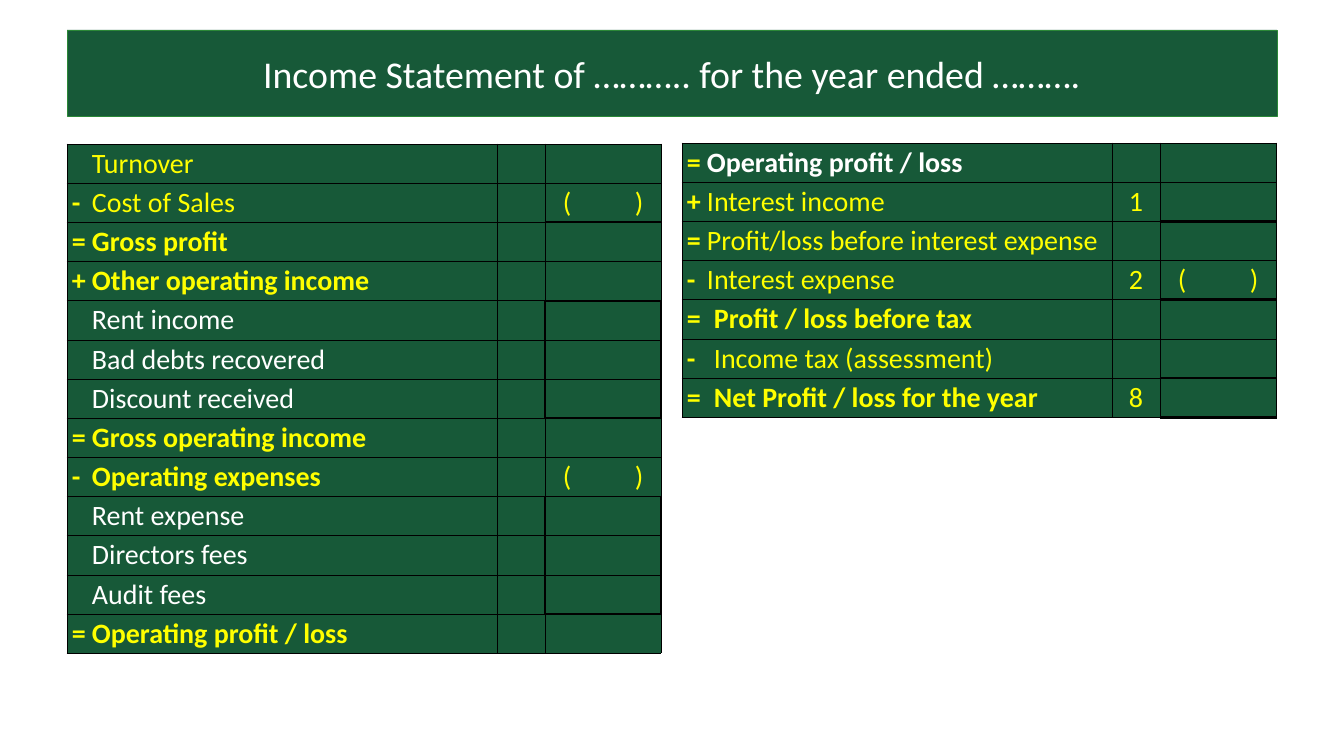
from dataclasses import dataclass

from lxml.etree import SubElement
from pptx import Presentation
from pptx.dml.color import RGBColor
from pptx.enum.shapes import MSO_SHAPE
from pptx.enum.text import MSO_ANCHOR, PP_ALIGN
from pptx.oxml.ns import qn
from pptx.util import Emu, Pt

GREEN = RGBColor(0x17, 0x59, 0x38)
EDGE_GREEN = RGBColor(0x2B, 0x88, 0x37)
YELLOW = RGBColor(0xFF, 0xFF, 0x00)
WHITE = RGBColor(0xFF, 0xFF, 0xFF)
BLACK = RGBColor(0x00, 0x00, 0x00)

SCALE = 18143
COLUMN_WIDTHS = (430, 48, 116)
ROW_HEIGHT = 39
PADDING = 5
SIGN_WIDTH = 20
WIDE_SIGN_WIDTH = 27
BRACKET_INSET = 18
BRACKET_GAP = 72


@dataclass
class Entry:
    """One line of the income statement."""
    label: str
    sign: str = ""
    color: RGBColor = YELLOW
    bold: bool = False
    note: str = ""
    bracketed: bool = False
    sign_width: int = SIGN_WIDTH


TRADING_ENTRIES = (
    Entry("Turnover"),
    Entry("Cost of Sales", "-", bracketed=True),
    Entry("Gross profit", "=", bold=True),
    Entry("Other operating income", "+", bold=True),
    Entry("Rent income", color=WHITE),
    Entry("Bad debts recovered", color=WHITE),
    Entry("Discount received", color=WHITE),
    Entry("Gross operating income", "=", bold=True),
    Entry("Operating expenses", "-", bold=True, bracketed=True),
    Entry("Rent expense", color=WHITE),
    Entry("Directors fees", color=WHITE),
    Entry("Audit fees", color=WHITE),
    Entry("Operating profit / loss", "=", bold=True),
)
PROFIT_ENTRIES = (
    Entry("Operating profit / loss", "=", color=WHITE, bold=True),
    Entry("Interest income", "+", note="1"),
    Entry("Profit/loss before interest expense", "="),
    Entry("Interest expense", "-", note="2", bracketed=True),
    Entry("Profit / loss before tax", "=", bold=True, sign_width=WIDE_SIGN_WIDTH),
    Entry("Income tax (assessment)", "-", sign_width=WIDE_SIGN_WIDTH),
    Entry("Net Profit / loss for the year", "=", bold=True, note="8",
          sign_width=WIDE_SIGN_WIDTH),
)


def px(length):
    """Turn whole pixels into EMU."""
    return Emu(length * SCALE)


def add_text(para, text, size=40, color=YELLOW, bold=False):
    """Append a formatted run to a paragraph."""
    span = para.add_run()
    span.text = text
    span.font.name = "Calibri"
    span.font.size = Pt(size)
    span.font.bold = bold
    span.font.color.rgb = color


def add_tab_stop(para, position):
    """Give a paragraph one left tab stop."""
    tab_list = SubElement(para._p.get_or_add_pPr(), qn("a:tabLst"))
    SubElement(tab_list, qn("a:tab"), pos=str(px(position)), algn="l")


def style_cell(cell, edges):
    """Draw the four cell edges, given widths in points, and fill the cell."""
    properties = cell._tc.get_or_add_tcPr()
    for side in "LRTB":
        line = SubElement(properties, qn(f"a:ln{side}"), w=str(Pt(edges.get(side, 1))))
        fill = SubElement(line, qn("a:solidFill"))
        SubElement(fill, qn("a:srgbClr"), val=str(BLACK))
    cell.fill.solid()
    cell.fill.fore_color.rgb = GREEN
    cell.vertical_anchor = MSO_ANCHOR.MIDDLE
    cell.margin_left = px(PADDING)


def write_entry(cells, entry):
    """Write the label, note and amount of one entry."""
    label_cell, note_cell, amount_cell = cells
    para = label_cell.text_frame.paragraphs[0]
    if entry.sign:
        add_tab_stop(para, entry.sign_width)
        add_text(para, entry.sign + "\t", bold=True)
    else:
        label_cell.margin_left = px(PADDING + entry.sign_width)
    add_text(para, entry.label, color=entry.color, bold=entry.bold)
    if entry.note:
        para = note_cell.text_frame.paragraphs[0]
        para.alignment = PP_ALIGN.CENTER
        add_text(para, entry.note)
    if entry.bracketed:
        amount_cell.margin_left = px(BRACKET_INSET)
        para = amount_cell.text_frame.paragraphs[0]
        add_tab_stop(para, BRACKET_GAP)
        add_text(para, "(\t)")


def add_statement(slide, left, top, entries, ruled, boxed, weight):
    """Add a statement table with heavy rules under and boxes round amounts."""
    frame = slide.shapes.add_table(
        len(entries), len(COLUMN_WIDTHS), px(left), px(top),
        px(sum(COLUMN_WIDTHS)), px(ROW_HEIGHT * len(entries)))
    table = frame.table
    table.first_row = table.horz_banding = False
    for column, width in zip(table.columns, COLUMN_WIDTHS):
        column.width = px(width)
    for index, entry in enumerate(entries):
        row = table.rows[index]
        row.height = px(ROW_HEIGHT)
        side = weight if index in boxed else 1
        amount_edges = {
            "L": side,
            "R": side,
            "T": weight if index - 1 in ruled else 1,
            "B": weight if index in ruled else 1,
        }
        cells = tuple(row.cells)
        for cell, edges in zip(cells, ({}, {"R": side}, amount_edges)):
            style_cell(cell, edges)
        write_entry(cells, entry)


def add_title(slide, text):
    """Add the title banner."""
    box = slide.shapes.add_shape(MSO_SHAPE.RECTANGLE, px(67), px(30), px(1210), px(86))
    box.shadow.inherit = False
    box.fill.solid()
    box.fill.fore_color.rgb = GREEN
    box.line.color.rgb = EDGE_GREEN
    box.line.width = Pt(0.75)
    box.text_frame.word_wrap = True
    box.text_frame.vertical_anchor = MSO_ANCHOR.MIDDLE
    para = box.text_frame.paragraphs[0]
    para.alignment = PP_ALIGN.CENTER
    add_text(para, text, size=54, color=WHITE)


def main():
    """Build the income statement slide."""
    deck = Presentation()
    deck.slide_width, deck.slide_height = px(1344), px(756)
    page = deck.slides.add_slide(deck.slide_layouts[6])
    add_title(page, "Income Statement of ……….. for the year ended ……….")
    add_statement(page, 67, 144, TRADING_ENTRIES, ruled={1, 3, 6, 8, 11},
                  boxed={4, 5, 6, 9, 10, 11}, weight=3)
    add_statement(page, 682, 143, PROFIT_ENTRIES, ruled={1, 3, 5, 6},
                  boxed=set(), weight=4.5)
    deck.save("out.pptx")


if __name__ == "__main__":
    main()
